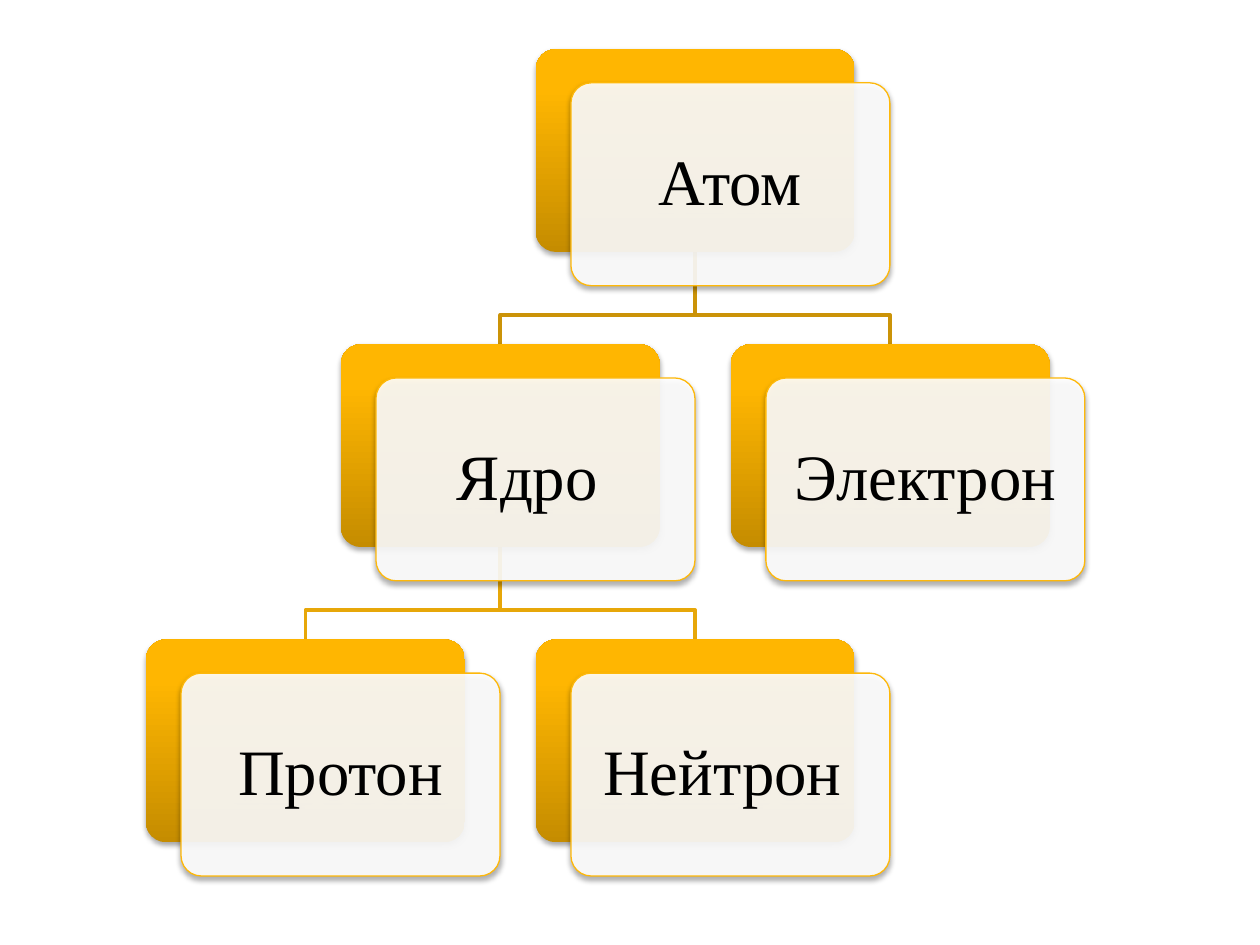
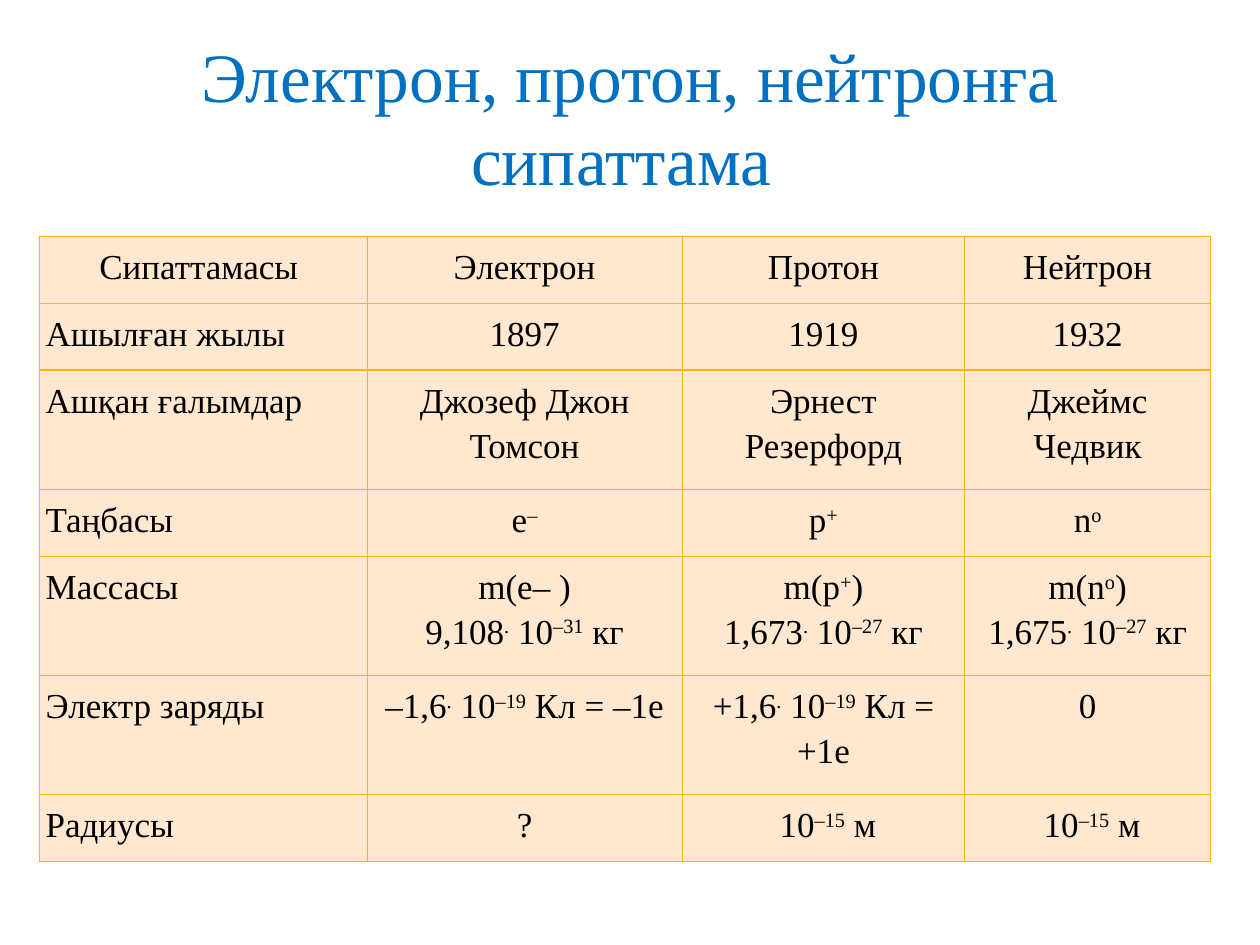
from lxml import etree
from pptx import Presentation
from pptx.dml.color import RGBColor
from pptx.enum.shapes import MSO_SHAPE
from pptx.enum.text import MSO_ANCHOR, PP_ALIGN
from pptx.oxml.ns import qn
from pptx.util import Cm, Pt

ROUND = MSO_SHAPE.ROUNDED_RECTANGLE
MIDDLE = MSO_ANCHOR.MIDDLE
CENTER, LEFT = PP_ALIGN.CENTER, PP_ALIGN.LEFT

FONT = "Times New Roman"
BLACK = RGBColor(0x00, 0x00, 0x00)
WHITE = RGBColor(0xFF, 0xFF, 0xFF)
BLUE = RGBColor(0x00, 0x70, 0xC0)
AMBER = RGBColor(0xFF, 0xB6, 0x01)
BROWN = RGBColor(0xC5, 0x8C, 0x00)
GOLD = RGBColor(0xFE, 0xB8, 0x0A)
PEACH = RGBColor(0xFF, 0xE7, 0xD0)
EDGE = RGBColor(0xFE, 0xB6, 0x04)
LINKS = (RGBColor(0xCB, 0x93, 0x08), RGBColor(0xE7, 0xA7, 0x09))

# Tree grid, in centimetres
LEFT_X, TOP_Y = 2.94, 0.99
STEP_X, STEP_Y = 3.93, 5.95
NODE_W, NODE_H = 6.43, 4.09
SHIFT_X, SHIFT_Y = 0.71, 0.68
DROP = 1.27

# Node: column and level
NODES = {
    "Атом": (2, 0),
    "Ядро ": (1, 1),
    "Электрон": (3, 1),
    "Протон": (0, 2),
    "Нейтрон ": (2, 2),
}
PAIRS = [("Атом", "Электрон"), ("Ядро ", "Нейтрон "),
         ("Ядро ", "Протон"), ("Атом", "Ядро ")]

# Text between two ^ marks is raised
ROWS = [
    ["Сипаттамасы ", "Электрон", "Протон", "Нейтрон"],
    ["Ашылған жылы", "1897", "1919", "1932"],
    ["Ашқан ғалымдар", "Джозеф Джон Томсон", "Эрнест Резерфорд",
     "Джеймс Чедвик"],
    ["Таңбасы", "е^–^", "p^+^", "n^o^"],
    ["Массасы", "m(e– )\n9,108^.^ 10^–31^ кг",
     "m(p^+^)\n1,673^.^ 10^–27^ кг", "m(n^o^)\n1,675^.^ 10^–27^ кг"],
    ["Электр заряды", "–1,6^.^ 10^–19^ Кл = –1е",
     "+1,6^.^ 10^–19^ Кл = +1е", "0"],
    ["Радиусы", "?", " 10^–15^ м", " 10^–15^ м"],
]
WIDTHS = [6.61, 6.35, 5.7, 4.95]
LOW, TALL = 1.35, 2.4
HEIGHTS = [LOW, LOW, TALL, LOW, TALL, TALL, LOW]


def add(parent, tag, **attrs):
    return etree.SubElement(parent, qn(tag), attrs)


class Deck:
    def __init__(self):
        self.prs = Presentation()
        self.prs.slide_width, self.prs.slide_height = Cm(25.4), Cm(19.05)
        self.slide = None

    def start(self, title=None):
        layout = self.prs.slide_layouts[5 if title else 6]
        self.slide = self.prs.slides.add_slide(layout)
        if title:
            box = self.slide.shapes.title
            box.left, box.top = Cm(1.27), Cm(0.76)
            box.width, box.height = Cm(22.86), Cm(3.18)
            box.text_frame.vertical_anchor = MIDDLE
            para = box.text_frame.paragraphs[0]
            para.alignment = CENTER
            self.run(para, title, 39.6, BLUE)

    def run(self, para, text, size, color=BLACK, raised=False):
        run = para.add_run()
        run.text = text
        font = run.font
        font.name, font.size, font.color.rgb = FONT, Pt(size), color
        if raised:
            font._element.set("baseline", "30000")

    def link(self, start, end, color):
        """Draw an elbow from a parent's base to a child's top."""
        (x1, y1), (x2, y2) = start, end
        bend = y1 + DROP
        path = self.slide.shapes.build_freeform(Cm(x1), Cm(y1))
        path.add_line_segments(
            [(Cm(x), Cm(y)) for x, y in ((x1, bend), (x2, bend), (x2, y2))],
            close=False)
        shape = path.convert_to_shape()
        shape.fill.background()
        shape.line.color.rgb, shape.line.width = color, Pt(2)
        shape.shadow.inherit = False

    def plate(self, x, y):
        """Add a rounded plate with a soft shadow."""
        shape = self.slide.shapes.add_shape(
            ROUND, Cm(x), Cm(y), Cm(NODE_W), Cm(NODE_H))
        shape.adjustments[0] = 0.1
        shape.shadow.inherit = False
        glow = add(shape._element.spPr.find(qn("a:effectLst")),
                   "a:outerShdw", blurRad=str(Pt(3.1)), dist=str(Pt(1.8)),
                   dir="5400000", rotWithShape="0")
        add(add(glow, "a:srgbClr", val="000000"), "a:alpha", val="35000")
        return shape

    def node(self, text, x, y):
        back = self.plate(x, y)
        back.line.fill.background()
        back.fill.gradient()
        back.fill.gradient_angle = 90
        stops = zip(back.fill.gradient_stops, (BROWN, AMBER), (0, 0.8))
        for stop, color, place in stops:
            stop.color.rgb, stop.position = color, place

        card = self.plate(x + SHIFT_X, y + SHIFT_Y)
        card.fill.solid()
        card.fill.fore_color.rgb = WHITE
        tint = card._element.spPr.find(qn("a:solidFill")).find(qn("a:srgbClr"))
        add(tint, "a:alpha", val="90000")
        card.line.color.rgb, card.line.width = GOLD, Pt(0.75)
        frame = card.text_frame
        frame.word_wrap, frame.vertical_anchor = True, MIDDLE
        frame.margin_left = frame.margin_right = Cm(0.38)
        frame.margin_top = frame.margin_bottom = Cm(0.38)
        para = frame.paragraphs[0]
        para.alignment, para.line_spacing = CENTER, 0.9
        self.run(para, text, 37)

    def cell(self, cell, text, label):
        cell.margin_left = cell.margin_right = Cm(0.13)
        cell.margin_top = cell.margin_bottom = Cm(0.13)
        para = cell.text_frame.paragraphs[0]
        para.alignment, para.line_spacing = LEFT if label else CENTER, 1.15
        if label:
            para.space_after = Pt(10)
        for row, line in enumerate(text.split("\n")):
            if row:
                para.add_line_break()
            for part, piece in enumerate(line.split("^")):
                if piece:
                    self.run(para, piece, 20, raised=part % 2 == 1)
        props = cell._tc.get_or_add_tcPr()
        for side in "LRTB":
            edge = add(props, "a:ln" + side, w=str(Pt(0.75)))
            add(add(edge, "a:solidFill"), "a:srgbClr", val=str(EDGE))
        cell.fill.solid()
        cell.fill.fore_color.rgb = PEACH

    def table(self, rows, x, y):
        grid = self.slide.shapes.add_table(
            len(rows), len(WIDTHS), Cm(x), Cm(y),
            Cm(sum(WIDTHS)), Cm(sum(HEIGHTS))).table
        grid.first_row = grid.horz_banding = False
        for col, width in zip(grid.columns, WIDTHS):
            col.width = Cm(width)
        for row, height in zip(grid.rows, HEIGHTS):
            row.height = Cm(height)
        for r, row in enumerate(rows):
            for c, text in enumerate(row):
                self.cell(grid.cell(r, c), text, label=r > 0 and c == 0)


def spot(name):
    """Return the top left corner of a node."""
    col, level = NODES[name]
    return LEFT_X + col * STEP_X, TOP_Y + level * STEP_Y


def main():
    deck = Deck()
    deck.start()
    for parent, child in PAIRS:
        (x1, y1), (x2, y2) = spot(parent), spot(child)
        half = NODE_W / 2
        deck.link((x1 + half, y1 + NODE_H), (x2 + half, y2),
                  LINKS[NODES[parent][1]])
    for name in NODES:
        deck.node(name, *spot(name))

    deck.start("Электрон, протон, нейтронға сипаттама ")
    deck.table(ROWS, 0.79, 4.76)
    deck.prs.save("out.pptx")


if __name__ == "__main__":
    main()
